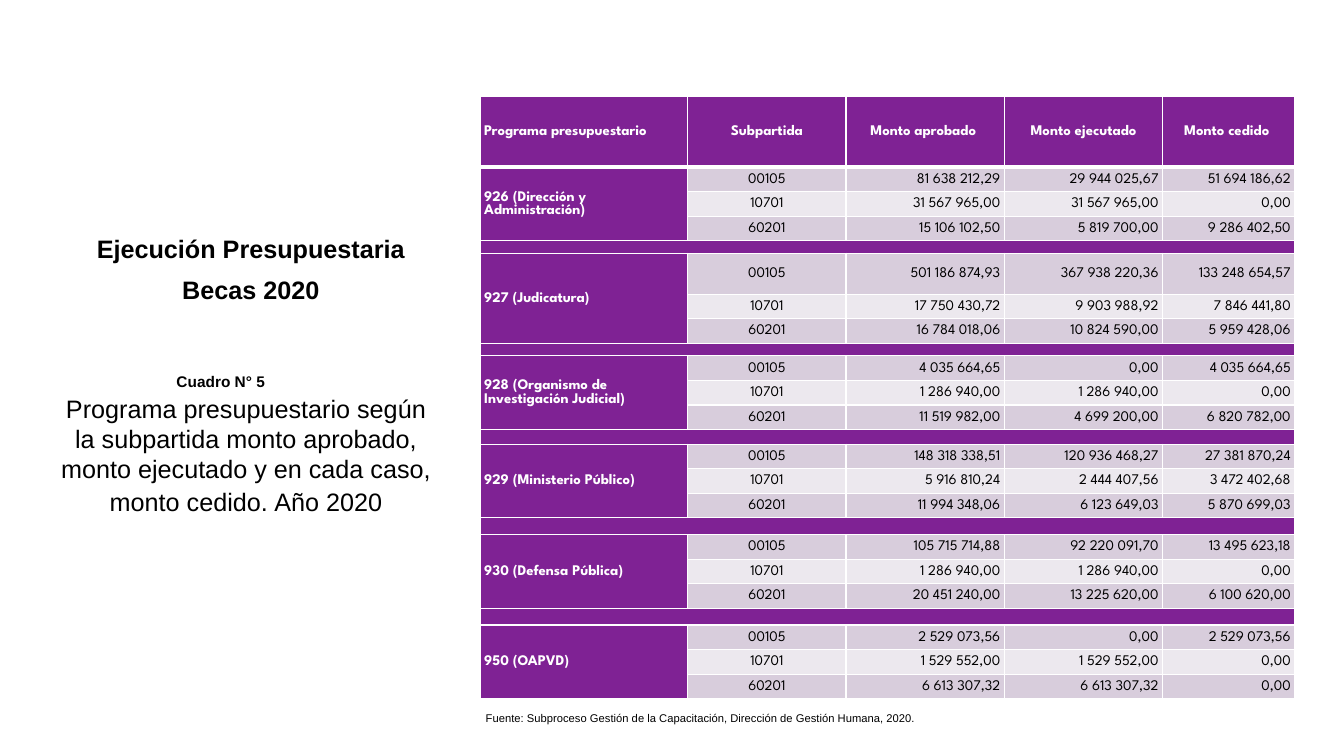
import pptx
import pptx.util
import pptx.dml.color
import pptx.enum.text
import pptx.oxml
import pptx.oxml.ns

Pt = pptx.util.Pt
ALIGN = pptx.enum.text.PP_ALIGN
ANCHOR = pptx.enum.text.MSO_ANCHOR
COLORS = {"purple": "7F2294", "dark": "D8CDDC", "light": "ECE8EE",
          "white": "FFFFFF", "black": "000000"}
NAMESPACE = pptx.oxml.ns.nsdecls("a")


def add_run(paragraph, text, size, color="black", bold=False, font="Arial"):
    run = paragraph.add_run()
    run.text = text
    run.font.size = Pt(size)
    run.font.name = font
    run.font.bold = bold
    run.font.color.rgb = pptx.dml.color.RGBColor.from_string(COLORS[color])


def style_cell(cell, fill, top=1, bottom=1):
    cell.fill.solid()
    cell.fill.fore_color.rgb = pptx.dml.color.RGBColor.from_string(COLORS[fill])
    cell.vertical_anchor = ANCHOR.MIDDLE
    cell.margin_left = cell.margin_right = Pt(2.9)
    cell.margin_top, cell.margin_bottom = Pt(0.6), Pt(0)
    properties = cell._tc.get_or_add_tcPr()
    borders = [("lnL", 1), ("lnR", 1), ("lnT", top), ("lnB", bottom)]
    for position, (side, width) in enumerate(borders):
        properties.insert(position, pptx.oxml.parse_xml(
            f'<a:{side} {NAMESPACE} w="{Pt(width)}"><a:solidFill>'
            f'<a:srgbClr val="{COLORS["white"]}"/></a:solidFill></a:{side}>'))


headers = ["Programa presupuestario", "Subpartida", "Monto aprobado ",
           "Monto ejecutado", "Monto cedido "]
subpartidas = ["00105", "10701", "60201"]
programs = [
    ("926 (Dirección y Administración)", [
        ("81 638 212,29", "29 944 025,67", "51 694 186,62"),
        ("31 567 965,00", "31 567 965,00", "0,00"),
        ("15 106 102,50", "5 819 700,00", "9 286 402,50")]),
    ("927 (Judicatura)", [
        ("501 186 874,93", "367 938 220,36", "133 248 654,57"),
        ("17 750 430,72", "9 903 988,92", "7 846 441,80"),
        ("16 784 018,06", "10 824 590,00", "5 959 428,06")]),
    ("928 (Organismo de Investigación Judicial)", [
        ("4 035 664,65", "0,00", "4 035 664,65"),
        ("1 286 940,00", "1 286 940,00", "0,00"),
        ("11 519 982,00", "4 699 200,00", "6 820 782,00")]),
    ("929 (Ministerio Público)", [
        ("148 318 338,51", "120 936 468,27", "27 381 870,24"),
        ("5 916 810,24", "2 444 407,56", "3 472 402,68"),
        ("11 994 348,06", "6 123 649,03", "5 870 699,03")]),
    ("930 (Defensa Pública)", [
        ("105 715 714,88", "92 220 091,70", "13 495 623,18"),
        ("1 286 940,00", "1 286 940,00", "0,00"),
        ("20 451 240,00", "13 225 620,00", "6 100 620,00")]),
    ("950 (OAPVD)", [
        ("2 529 073,56", "0,00", "2 529 073,56"),
        ("1 529 552,00", "1 529 552,00", "0,00"),
        ("6 613 307,32", "6 613 307,32", "0,00")]),
]
column_widths = [148.3, 113.1, 113.1, 113.1, 94.4]
special_heights = {0: 50.4, 4: 9, 5: 29.2, 8: 9, 12: 10.4, 16: 12, 20: 12}
row_heights = [special_heights.get(row, 17.55) for row in range(24)]

presentation = pptx.Presentation()
presentation.slide_width, presentation.slide_height = Pt(960), Pt(540)
slide = presentation.slides.add_slide(presentation.slide_layouts[5])

title = slide.shapes.title
title.left, title.top, title.width, title.height = Pt(43.2), Pt(165.6), Pt(272), Pt(95.8)
title.text_frame.vertical_anchor = ANCHOR.TOP
title.text_frame.word_wrap = True
title.text_frame.auto_size = pptx.enum.text.MSO_AUTO_SIZE.NONE
for index, line in enumerate(["Ejecución Presupuestaria", "Becas 2020"]):
    paragraph = title.text_frame.add_paragraph() if index else title.text_frame.paragraphs[0]
    paragraph.alignment = ALIGN.CENTER
    paragraph.line_spacing = 0.9
    paragraph.space_before = Pt(10 * index)
    add_run(paragraph, line, 18, bold=True)

caption = slide.shapes.add_textbox(Pt(0), Pt(262), Pt(315.4), Pt(112.3))
caption.text_frame.word_wrap = True
paragraph = caption.text_frame.paragraphs[0]
paragraph.alignment = ALIGN.CENTER
add_run(paragraph, "Cuadro N° 5", 11, bold=True)
paragraph = caption.text_frame.add_paragraph()
paragraph.alignment = ALIGN.CENTER
paragraph.space_before = Pt(2)
paragraph._p.get_or_add_pPr().set("marL", str(Pt(36)))
add_run(paragraph, "Programa presupuestario según la subpartida monto aprobado, "
        "monto ejecutado y en cada caso, monto cedido.", 18)
add_run(paragraph, " ", 20, font="Calibri")
add_run(paragraph, "Año 2020", 18)

table = slide.shapes.add_table(24, 5, Pt(343), Pt(68.9), Pt(sum(column_widths)),
                               Pt(sum(row_heights))).table
table.first_row = table.horz_banding = False
for column, width in zip(table.columns, column_widths):
    column.width = Pt(width)
for row, height in zip(table.rows, row_heights):
    row.height = Pt(height)

rows = [headers]
for name, amounts in programs:
    if len(rows) > 1:
        rows.append([""] * 5)
    for index, values in enumerate(amounts):
        rows.append(["" if index else name, subpartidas[index], *values])

for row_index, texts in enumerate(rows):
    position = row_index % 4
    for column_index, text in enumerate(texts):
        cell = table.cell(row_index, column_index)
        is_heading = position == 0 or column_index == 0
        fill = "purple" if is_heading else "light" if position == 2 else "dark"
        style_cell(cell, fill, top=3 if row_index == 1 else 1,
                   bottom=3 if row_index == 0 else 1)
        paragraph = cell.text_frame.paragraphs[0]
        if text:
            paragraph.alignment = (ALIGN.LEFT if column_index == 0 else
                                   ALIGN.CENTER if column_index == 1 or row_index == 0
                                   else ALIGN.RIGHT)
            add_run(paragraph, text, 10.5, "white" if is_heading else "black",
                    is_heading, "League Spartan")
        else:
            paragraph._p.append(pptx.oxml.parse_xml(f'<a:endParaRPr {NAMESPACE} sz="400"/>'))
    if position == 0 and row_index:
        table.cell(row_index, 0).merge(table.cell(row_index, 4))
    elif position == 1:
        table.cell(row_index, 0).merge(table.cell(row_index + 2, 0))

source_note = slide.shapes.add_textbox(Pt(269.3), Pt(504.7), Pt(480.2), Pt(17))
source_note.text_frame.word_wrap = True
paragraph = source_note.text_frame.paragraphs[0]
properties = paragraph._p.get_or_add_pPr()
properties.set("marL", str(Pt(35.3)))
properties.set("indent", str(Pt(35.3)))
add_run(paragraph, "Fuente: Subproceso Gestión de la Capacitación, "
        "Dirección de Gestión Humana, 2020.", 8)

presentation.save("out.pptx")
